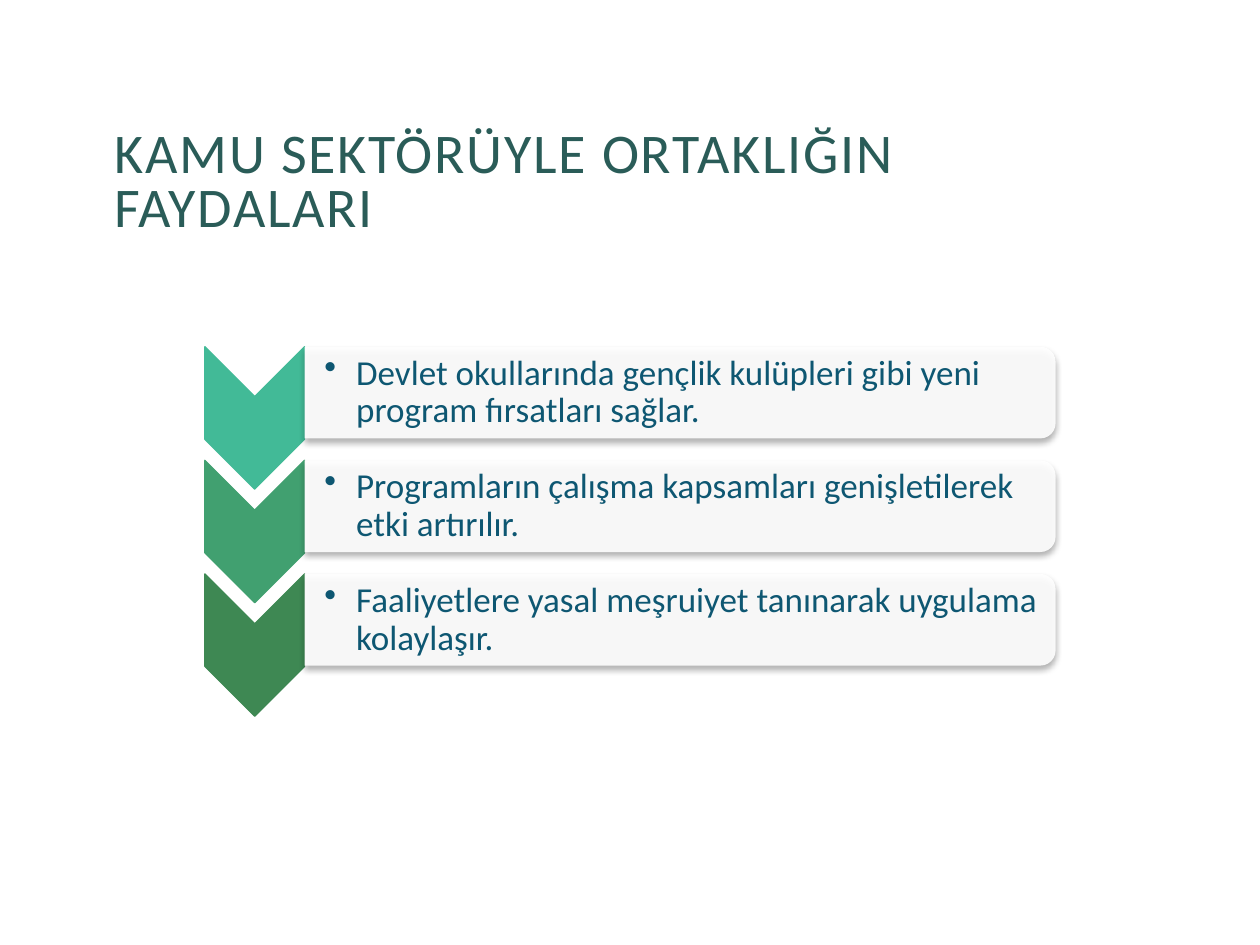
from lxml.etree import SubElement
from pptx import Presentation
from pptx.dml.color import RGBColor
from pptx.enum.shapes import MSO_SHAPE
from pptx.enum.text import MSO_ANCHOR, PP_ALIGN
from pptx.oxml import parse_xml
from pptx.oxml.ns import nsdecls, qn
from pptx.util import Cm, Pt

FONT = "Calibri"
BENEFITS = [
    ("42BA97", "Devlet okullarında gençlik kulüpleri gibi yeni program fırsatları sağlar."),
    ("41A070", "Programların çalışma kapsamları genişletilerek etki artırılır."),
    ("3E8853", "Faaliyetlere yasal meşruiyet tanınarak uygulama kolaylaşır."),
]
ROW_PITCH = 2.29
CHEVRON_W, CHEVRON_H = 2.01, 2.87
PANEL_H = 1.85


def rgb(color):
    return RGBColor.from_string(color)


def add_text(s, left, top, width, height, text, size, color, spacing, insets):
    box = s.shapes.add_textbox(Cm(left), Cm(top), Cm(width), Cm(height))
    tf = box.text_frame
    tf.word_wrap = True
    tf.vertical_anchor = MSO_ANCHOR.MIDDLE
    tf.margin_left, tf.margin_top, tf.margin_right, tf.margin_bottom = map(Cm, insets)
    p = tf.paragraphs[0]
    p.text = text
    p.alignment = PP_ALIGN.LEFT
    p.line_spacing = spacing
    p.font.name = FONT
    p.font.size = Pt(size)
    p.font.color.rgb = rgb(color)
    return p


def add_turned_shape(s, kind, left, top, width, height, color):
    """Place a shape turned by 90° so that it covers the given box."""
    x = left + (width - height) / 2
    y = top + (height - width) / 2
    sp = s.shapes.add_shape(kind, Cm(x), Cm(y), Cm(height), Cm(width))
    sp.rotation = 90
    sp.shadow.inherit = False
    sp.fill.solid()
    sp.fill.fore_color.rgb = rgb(color)
    return sp


def add_title(s, left, top, width, height):
    p = add_text(s, left, top, width, height, "KAMU SEKTÖRÜYLE ORTAKLIĞIN FAYDALARI",
                 32, "2A5C58", 0.8, (0.18, 0.1, 0.18, 0.1))
    p.runs[0].font._element.set("spc", "100")


def add_panel(s, left, top, width, height):
    panel = add_turned_shape(s, MSO_SHAPE.ROUND_2_SAME_RECTANGLE,
                             left, top, width, height, "FFFFFF")
    panel.line.fill.background()
    sp_pr = panel._element.spPr
    fill_color = sp_pr.find(qn("a:solidFill")).find(qn("a:srgbClr"))
    SubElement(fill_color, qn("a:alpha"), val="90000")
    sp_pr.find(qn("a:effectLst")).append(parse_xml(
        f'<a:outerShdw {nsdecls("a")} blurRad="{Pt(3.5)}" dist="{Pt(2.2)}" '
        'dir="5400000" rotWithShape="0"><a:srgbClr val="000000">'
        '<a:alpha val="32000"/></a:srgbClr></a:outerShdw>'))


def add_benefit(s, left, top, width, color, text):
    chevron = add_turned_shape(s, MSO_SHAPE.CHEVRON, left, top, CHEVRON_W, CHEVRON_H, color)
    chevron.line.color.rgb = rgb(color)
    chevron.line.width = Pt(0.75)

    panel_left, panel_w = left + CHEVRON_W, width - CHEVRON_W
    add_panel(s, panel_left, top, panel_w, PANEL_H)

    p = add_text(s, panel_left, top + 0.09, panel_w - 0.1, PANEL_H - 0.18, text,
                 20, "0E5772", 0.9, (0.4, 0.03, 0.03, 0.03))
    p_pr = p._p.get_or_add_pPr()
    p_pr.set("marL", str(Cm(0.64)))
    p_pr.set("indent", str(Cm(-0.64)))
    # The bullet has to come before the default run properties.
    p_pr.find(qn("a:defRPr")).addprevious(
        parse_xml(f'<a:buChar {nsdecls("a")} char="•"/>'))


def add_benefit_list(s, left, top, width):
    for i, (color, text) in enumerate(BENEFITS):
        add_benefit(s, left, top + i * ROW_PITCH, width, color, text)


def main():
    prs = Presentation()
    prs.slide_width, prs.slide_height = Cm(25.4), Cm(19.05)
    s = prs.slides.add_slide(prs.slide_layouts[6])
    add_title(s, 2.13, 1.63, 21.16, 4.17)
    add_benefit_list(s, 4.13, 6.99, 17.15)
    prs.save("out.pptx")


if __name__ == "__main__":
    main()
